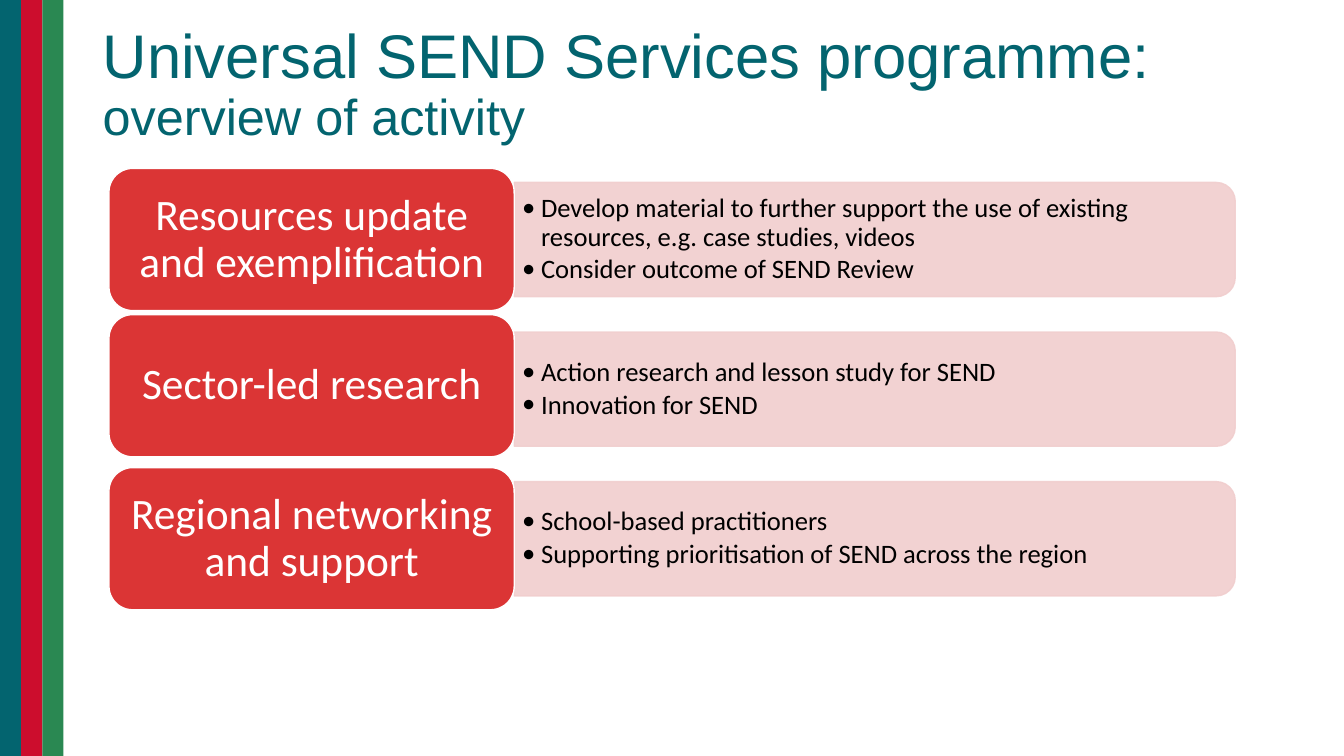
import pptx
import pptx.util
import pptx.dml.color
import pptx.enum.shapes
import pptx.enum.text
import pptx.oxml.ns
from lxml import etree

Pt = pptx.util.Pt
RGB = pptx.dml.color.RGBColor
SHAPE = pptx.enum.shapes.MSO_SHAPE
ALIGN = pptx.enum.text.PP_ALIGN
MIDDLE = pptx.enum.text.MSO_ANCHOR.MIDDLE
qn = pptx.oxml.ns.qn

TEAL = RGB(0x03, 0x64, 0x6F)
CRIMSON = RGB(0xCC, 0x0D, 0x2D)
GREEN = RGB(0x2A, 0x88, 0x52)
RED = RGB(0xDB, 0x35, 0x35)
PINK = RGB(0xF1, 0xCE, 0xCE)
WHITE = RGB(0xFF, 0xFF, 0xFF)
BLACK = RGB(0, 0, 0)

WIDTH, HEIGHT = 960, 540
PITCH = 106.85

# label, bullets, upward shift of the label
ROWS = [
    ("Resources update and exemplification",
     ["Develop material to further support the use of existing resources, "
      "e.g. case studies, videos",
      "Consider outcome of SEND Review"], 0),
    ("Sector-led research",
     ["Action research and lesson study for SEND",
      "Innovation for SEND"], 2.4),
    ("Regional networking and support",
     ["School-based practitioners",
      "Supporting prioritisation of SEND across the region"], 0),
]


def add_block(slide, kind, box, fill, line=None):
    shape = slide.shapes.add_shape(kind, *map(Pt, box))
    shape.shadow.inherit = False
    shape.fill.solid()
    shape.fill.fore_color.rgb = fill
    if line is None:
        shape.line.fill.background()
    else:
        shape.line.color.rgb = line
        shape.line.width = Pt(1)
    return shape


def set_frame(shape, side, edge):
    """Wrap and centre the text vertically, with side and top/bottom insets."""
    frame = shape.text_frame
    frame.word_wrap = True
    frame.vertical_anchor = MIDDLE
    frame.margin_left = frame.margin_right = Pt(side)
    frame.margin_top = frame.margin_bottom = Pt(edge)
    return frame


def add_run(para, text, size, color, font):
    para.line_spacing = 0.9
    run = para.add_run()
    run.text = text
    run.font.size = Pt(size)
    run.font.name = font
    run.font.color.rgb = color


def add_bullet(para, size, font):
    props = para._p.get_or_add_pPr()
    props.set("marL", str(Pt(13.5)))
    props.set("indent", str(-Pt(13.5)))
    etree.SubElement(props, qn("a:buFont")).set("typeface", font)
    etree.SubElement(props, qn("a:buChar")).set("char", "•")
    para.font.size = Pt(size)
    para.font.name = font


def add_stripes(slide, box):
    left, top, width, height = box
    step = width / 3
    for i, color in enumerate((TEAL, CRIMSON, GREEN)):
        add_block(slide, SHAPE.RECTANGLE, (left + i * step, top, step, height), color)


def add_title(slide, box):
    frame = set_frame(slide.shapes.add_textbox(*map(Pt, box)), 7.2, 3.6)
    para = frame.paragraphs[0]
    add_run(para, "Universal SEND Services programme: ", 44, TEAL, "Arial")
    add_run(para, "overview of activity", 36, TEAL, "Arial")


def add_panel(slide, box, bullets):
    left, top, width, height = box
    # The preset rounds its top corners, so a quarter turn rounds the right side
    turned = (left + (width - height) / 2, top + (height - width) / 2, height, width)
    panel = add_block(slide, SHAPE.ROUND_2_SAME_RECTANGLE, turned, PINK, PINK)
    panel.rotation = 90
    for tint in panel._element.spPr.iter(qn("a:srgbClr")):
        etree.SubElement(tint, qn("a:alpha")).set("val", "90000")

    text = slide.shapes.add_textbox(Pt(left), Pt(top + 4), Pt(width - 4), Pt(height - 8))
    frame = set_frame(text, 5.7, 2.9)
    for i, words in enumerate(bullets):
        para = frame.add_paragraph() if i else frame.paragraphs[0]
        add_bullet(para, 19, "Calibri")
        para.space_after = Pt(2.85)
        add_run(para, words, 19, BLACK, "Calibri")


def add_label(slide, box, words):
    label = add_block(slide, SHAPE.ROUNDED_RECTANGLE, box, RED, WHITE)
    # The rounded corners already keep the text about 5 pt from each edge
    para = set_frame(label, 8.5, 4.4).paragraphs[0]
    para.alignment = ALIGN.CENTER
    add_run(para, words, 31, WHITE, "Calibri")


def add_row(slide, box, words, bullets, shift):
    left, top, width, height = box
    split = 289.5
    add_panel(slide, (left + split, top + 10, width - split, height - 20), bullets)
    add_label(slide, (left, top - shift, split, height), words)


def main():
    deck = pptx.Presentation()
    deck.slide_width, deck.slide_height = Pt(WIDTH), Pt(HEIGHT)
    slide = deck.slides.add_slide(deck.slide_layouts[6])
    add_stripes(slide, (0, 0, 45.3, HEIGHT))
    for i, row in enumerate(ROWS):
        add_row(slide, (77.8, 120.3 + i * PITCH, 804.5, 101.6), *row)
    add_title(slide, (66.2, 9, 828, 104.4))
    deck.save("out.pptx")


if __name__ == "__main__":
    main()
